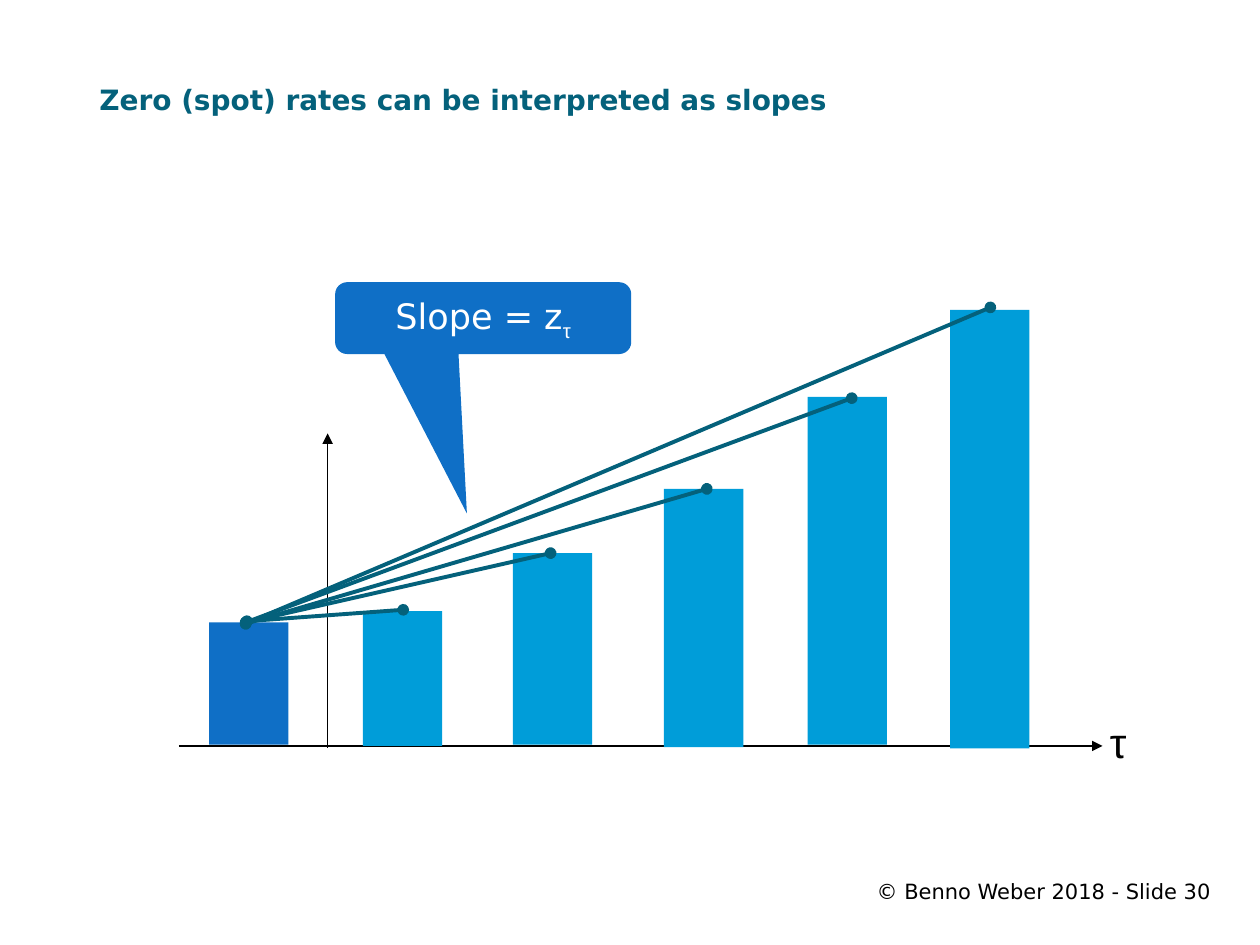
"""Builds a slide that shows zero rates as slopes between bar tops."""
from lxml import etree
from pptx import Presentation
from pptx.dml.color import RGBColor
from pptx.enum.shapes import MSO_CONNECTOR, MSO_SHAPE
from pptx.enum.text import MSO_ANCHOR, PP_ALIGN
from pptx.oxml.ns import qn
from pptx.util import Inches, Pt

STRAIGHT = MSO_CONNECTOR.STRAIGHT
RECT = MSO_SHAPE.RECTANGLE
CALLOUT = MSO_SHAPE.ROUNDED_RECTANGULAR_CALLOUT
MIDDLE = MSO_ANCHOR.MIDDLE
LEFT, CENTER, RIGHT = PP_ALIGN.LEFT, PP_ALIGN.CENTER, PP_ALIGN.RIGHT

BLACK, WHITE = "000000", "FFFFFF"
TEAL, BLUE, SKY = "04617B", "0F6FC6", "009DD9"
SANS, ARIAL = "DejaVu Sans", "Arial"

BAR_WIDTH = 0.63
BARS = [
    (1.66, 4.94, 0.97, BLUE),
    (2.88, 4.85, 1.07, SKY),
    (4.07, 4.39, 1.52, SKY),
    (5.27, 3.88, 2.05, SKY),
    (6.41, 3.15, 2.76, SKY),
    (7.54, 2.46, 3.48, SKY),
]
SLOPES = [
    ((1.95, 4.95), (7.86, 2.44)),
    ((1.95, 4.94), (6.76, 3.16)),
    ((1.95, 4.95), (5.61, 3.88)),
    ((1.95, 4.94), (4.37, 4.39)),
    ((1.96, 4.93), (3.2, 4.84)),
]


def rgb(color):
    """Turn a hex string into a colour."""
    return RGBColor.from_string(color)


def add_run(p, text, size, font, color, bold=False):
    """Append a formatted run to a paragraph."""
    r = p.add_run()
    r.text = text
    r.font.size = Pt(size)
    r.font.name = font
    r.font.bold = bold
    r.font.color.rgb = rgb(color)
    return r


def add_label(s, box, text, size, font, color, align=LEFT, bold=False, inset=0.08):
    """Add a text box holding a single run."""
    tf = s.shapes.add_textbox(*map(Inches, box)).text_frame
    tf.word_wrap = True
    tf.vertical_anchor = MIDDLE
    tf.margin_left = tf.margin_right = Inches(inset)
    tf.margin_top = tf.margin_bottom = Inches(0.08)
    p = tf.paragraphs[0]
    p.alignment = align
    add_run(p, text, size, font, color, bold)


def add_solid(s, kind, box, color):
    """Add a preset shape with a plain fill and no outline."""
    sp = s.shapes.add_shape(kind, *map(Inches, box))
    sp.shadow.inherit = False
    sp.fill.solid()
    sp.fill.fore_color.rgb = rgb(color)
    sp.line.fill.background()
    return sp


def add_line(s, start, end, color, width, head=None, tail=None):
    """Add a straight line with optional end marks."""
    line = s.shapes.add_connector(STRAIGHT, *map(Inches, start + end))
    line.line.color.rgb = rgb(color)
    line.line.width = Pt(width)
    ln = line.line._get_or_add_ln()
    for tag, mark in (("a:headEnd", head), ("a:tailEnd", tail)):
        if mark:
            etree.SubElement(ln, qn(tag), type=mark)
    etree.SubElement(line._element.spPr, qn("a:effectLst"))


def add_callout(s):
    """Add the callout that names the slope."""
    sp = add_solid(s, CALLOUT, (2.66, 2.24, 2.35, 0.57), BLUE)
    for i, value in enumerate((-0.055, 2.72, 0.167)):
        sp.adjustments[i] = value
    tf = sp.text_frame
    tf.vertical_anchor = MIDDLE
    p = tf.paragraphs[0]
    p.alignment = CENTER
    add_run(p, "Slope = z", 20, SANS, WHITE)
    r = add_run(p, "τ", 20, ARIAL, WHITE)
    r._r.get_or_add_rPr().set("baseline", "-25000")


def main():
    """Build and save the slide."""
    prs = Presentation()
    prs.slide_width, prs.slide_height = Inches(10), Inches(7.5)
    s = prs.slides.add_slide(prs.slide_layouts[6])
    add_label(s, (5.45, 6.89, 4.24, 0.36), "© Benno Weber 2018 - Slide 30",
              12, SANS, BLACK, RIGHT)
    add_label(s, (0.71, 0.56, 8.93, 0.45),
              "Zero (spot) rates can be interpreted as slopes",
              16, SANS, TEAL, bold=True)
    add_line(s, (1.42, 5.92), (8.75, 5.92), BLACK, 0.75, tail="triangle")
    add_line(s, (2.6, 3.44), (2.6, 5.94), BLACK, 0.75, head="triangle")
    add_label(s, (8.71, 5.64, 0.42, 0.5), "τ", 24, ARIAL, BLACK, inset=0.1)
    for left, top, height, color in BARS:
        add_solid(s, RECT, (left, top, BAR_WIDTH, height), color)
    for start, end in SLOPES:
        add_line(s, start, end, TEAL, 2.25, head="oval", tail="oval")
    add_callout(s)
    prs.save("out.pptx")


if __name__ == "__main__":
    main()
